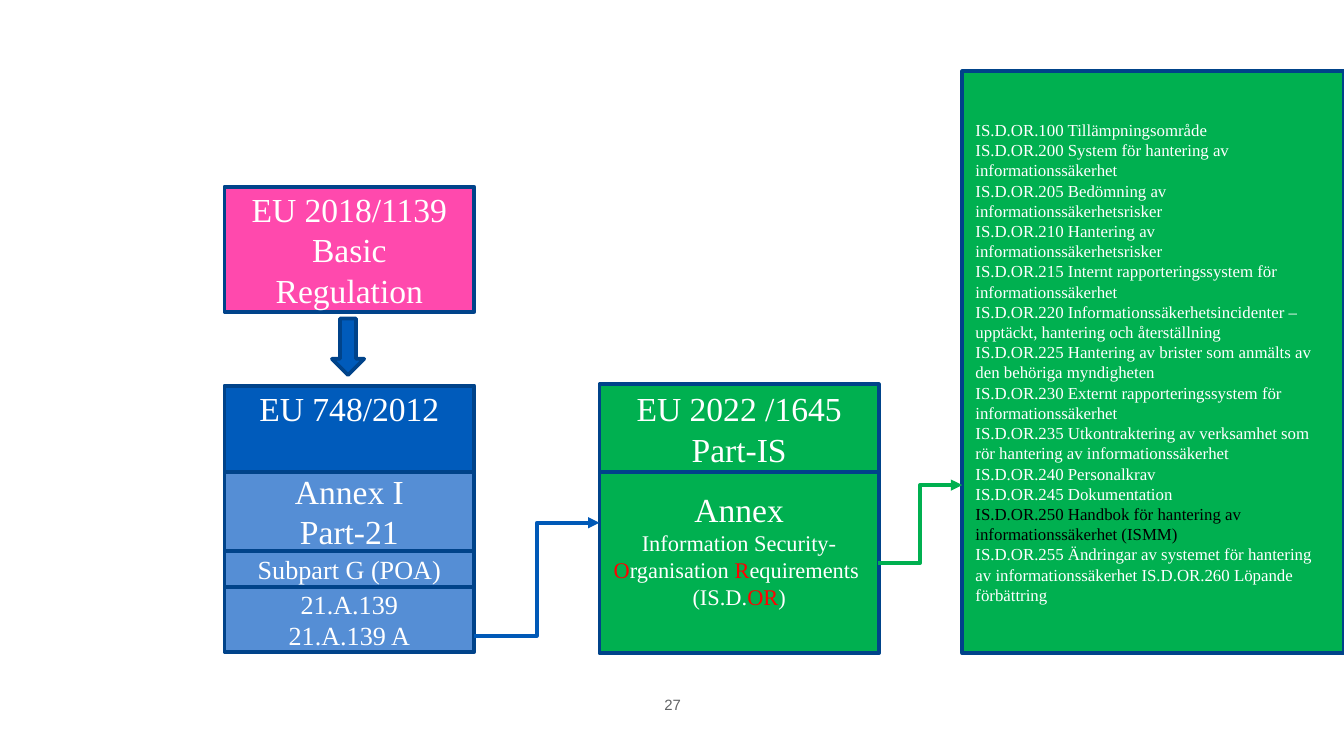
import copy
from dataclasses import dataclass
from typing import NamedTuple

import pptx
import pptx.util
import pptx.dml.color
import pptx.enum.shapes
import pptx.enum.text
import pptx.oxml.ns
from lxml import etree

SHAPES = pptx.enum.shapes.MSO_SHAPE
ANCHOR = pptx.enum.text.MSO_ANCHOR
ALIGN = pptx.enum.text.PP_ALIGN


@dataclass(frozen=True)
class Theme:
    serif: str = "Times New Roman"
    sans: str = "Arial"
    white: str = "FFFFFF"
    black: str = "000000"
    red: str = "FF0000"
    grey: str = "616365"
    border: str = "00438A"
    pink: str = "FF49AD"
    blue: str = "005BBB"
    light_blue: str = "558ED5"
    link_blue: str = "0059B7"
    green: str = "00B050"
    heading: float = 18
    section: float = 14
    detail: float = 12
    listing: float = 9
    footer: float = 8
    line: float = 2


THEME = Theme()
WIDTH = pptx.util.Inches(10)
HEIGHT = WIDTH * 9 // 16
COLUMNS, ROWS = 100, 56.25


class Run(NamedTuple):
    text: str
    color: str = THEME.white


class Line(NamedTuple):
    runs: tuple[Run, ...]
    size: float


class Area(NamedTuple):
    column: float
    row: float
    columns: float
    rows: float


class Block(NamedTuple):
    area: Area
    fill: str
    lines: tuple[Line, ...]
    align: int = ALIGN.CENTER
    anchor: int = ANCHOR.MIDDLE
    top: float = 0.5
    bottom: float = 0.5


class Link(NamedTuple):
    start: tuple[float, float]
    end: tuple[float, float]
    color: str


def across(columns: float) -> int:
    return round(WIDTH * columns / COLUMNS)


def down(rows: float) -> int:
    return round(HEIGHT * rows / ROWS)


def place(area: Area) -> tuple[int, int, int, int]:
    return across(area.column), down(area.row), across(area.columns), down(area.rows)


def rgb(color: str) -> pptx.dml.color.RGBColor:
    return pptx.dml.color.RGBColor.from_string(color)


def plain(size: float, *texts: str) -> tuple[Line, ...]:
    return tuple(Line((Run(text),), size) for text in texts)


def write(frame, lines, *, font=THEME.serif, align=ALIGN.CENTER,
          anchor=ANCHOR.MIDDLE, side=1.0, top=0.5, bottom=0.5) -> None:
    frame.word_wrap = True
    frame.vertical_anchor = anchor
    frame.margin_left = frame.margin_right = across(side)
    frame.margin_top, frame.margin_bottom = down(top), down(bottom)
    for index, line in enumerate(lines):
        paragraph = frame.paragraphs[0] if index == 0 else frame.add_paragraph()
        paragraph.alignment = align
        for part in line.runs:
            for piece in part.text.splitlines(keepends=True):
                run = paragraph.add_run()
                run.text = piece.rstrip("\n")
                run.font.name = font
                run.font.size = pptx.util.Pt(line.size)
                run.font.color.rgb = rgb(part.color)
                if piece.endswith("\n"):
                    paragraph.add_line_break()
                    paragraph._p[-1].append(copy.deepcopy(run._r.rPr))


def draw_shape(slide, kind, area: Area, fill: str):
    shape = slide.shapes.add_shape(kind, *place(area))
    shape.shadow.inherit = False
    shape.fill.solid()
    shape.fill.fore_color.rgb = rgb(fill)
    shape.line.color.rgb = rgb(THEME.border)
    shape.line.width = pptx.util.Pt(THEME.line)
    return shape


def draw_block(slide, block: Block) -> None:
    shape = draw_shape(slide, SHAPES.RECTANGLE, block.area, block.fill)
    write(shape.text_frame, block.lines, align=block.align, anchor=block.anchor,
          top=block.top, bottom=block.bottom)


def draw_link(slide, link: Link) -> None:
    (x1, y1), (x2, y2) = link.start, link.end
    connector = slide.shapes.add_connector(
        pptx.enum.shapes.MSO_CONNECTOR.ELBOW, across(x1), down(y1), across(x2), down(y2))
    connector.line.color.rgb = rgb(link.color)
    connector.line.width = pptx.util.Pt(THEME.line)
    outline = connector.line._get_or_add_ln()
    etree.SubElement(outline, pptx.oxml.ns.qn("a:tailEnd"), type="triangle")
    etree.SubElement(connector._element.spPr, pptx.oxml.ns.qn("a:effectLst"))


REGULATION_COLUMN = (16.7, 18.6)
SECURITY_COLUMN = (44.6, 20.8)


def stacked(column: tuple[float, float], row: float, rows: float) -> Area:
    return Area(column[0], row, column[1], rows)


requirement_lines = (Line((
    Run("IS.D.OR.100 Tillämpningsområde \n"
        "IS.D.OR.200 System för hantering av informationssäkerhet \n"
        "IS.D.OR.205 Bedömning av informationssäkerhetsrisker \n"
        "IS.D.OR.210 Hantering av informationssäkerhetsrisker \n"
        "IS.D.OR.215 Internt rapporteringssystem för informationssäkerhet \n"
        "IS.D.OR.220 Informationssäkerhetsincidenter – upptäckt, hantering och återställning \n"
        "IS.D.OR.225 Hantering av brister som anmälts av den behöriga myndigheten \n"
        "IS.D.OR.230 Externt rapporteringssystem för informationssäkerhet \n"
        "IS.D.OR.235 Utkontraktering av verksamhet som rör hantering av informationssäkerhet \n"
        "IS.D.OR.240 Personalkrav \n"
        "IS.D.OR.245 Dokumentation \n"),
    Run("IS.D.OR.250 Handbok för hantering av informationssäkerhet (ISMM) \n", THEME.black),
    Run("IS.D.OR.255 Ändringar av systemet för hantering av informationssäkerhet "
        "IS.D.OR.260 Löpande förbättring"),
), THEME.listing),)

annex_lines = plain(THEME.heading, "Annex") + (
    Line((Run("Information Security-"), Run("O", THEME.red), Run("rganisation "),
          Run("R", THEME.red), Run("equirements \n(IS.D."), Run("OR", THEME.red),
          Run(")")), THEME.detail),
)

BLOCKS = (
    Block(stacked(REGULATION_COLUMN, 13.9, 9.3), THEME.pink,
          plain(THEME.heading, "EU 2018/1139", "Basic Regulation")),
    Block(stacked(REGULATION_COLUMN, 28.7, 6.4), THEME.blue,
          plain(THEME.heading, "EU 748/2012"), anchor=ANCHOR.TOP, top=0.2),
    Block(stacked(REGULATION_COLUMN, 35.1, 5.9), THEME.light_blue,
          plain(THEME.heading, "Annex I", "Part-21")),
    Block(stacked(REGULATION_COLUMN, 41, 2.7), THEME.light_blue,
          plain(THEME.section, "Subpart G (POA)")),
    Block(stacked(REGULATION_COLUMN, 43.7, 4.8), THEME.light_blue,
          plain(THEME.section, "21.A.139", "21.A.139 A")),
    Block(stacked(SECURITY_COLUMN, 28.6, 6.6), THEME.green,
          plain(THEME.heading, "EU 2022 /1645", "Part-IS")),
    Block(stacked(SECURITY_COLUMN, 35.1, 13.5), THEME.green, annex_lines, bottom=2.4),
    Block(Area(71.6, 5.3, 28.4, 43.3), THEME.green, requirement_lines, align=ALIGN.LEFT),
)

LINKS = (
    Link((35.3, 47.3), (44.6, 38.9), THEME.link_blue),
    Link((65.3, 41.9), (71.6, 36.1), THEME.green),
)


def main() -> None:
    deck = pptx.Presentation()
    deck.slide_width, deck.slide_height = WIDTH, HEIGHT
    slide = deck.slides.add_slide(deck.slide_layouts[6])

    for block in BLOCKS:
        draw_block(slide, block)
    draw_shape(slide, SHAPES.DOWN_ARROW, Area(24.7, 23.7, 2.4, 4.2), THEME.blue)
    for link in LINKS:
        draw_link(slide, link)

    page_number = slide.shapes.add_textbox(*place(Area(42.9, 51.7, 14.3, 1.4)))
    write(page_number.text_frame, (Line((Run("27", THEME.grey),), THEME.footer),),
          font=THEME.sans, side=0, top=0, bottom=0)
    deck.save("out.pptx")


if __name__ == "__main__":
    main()
